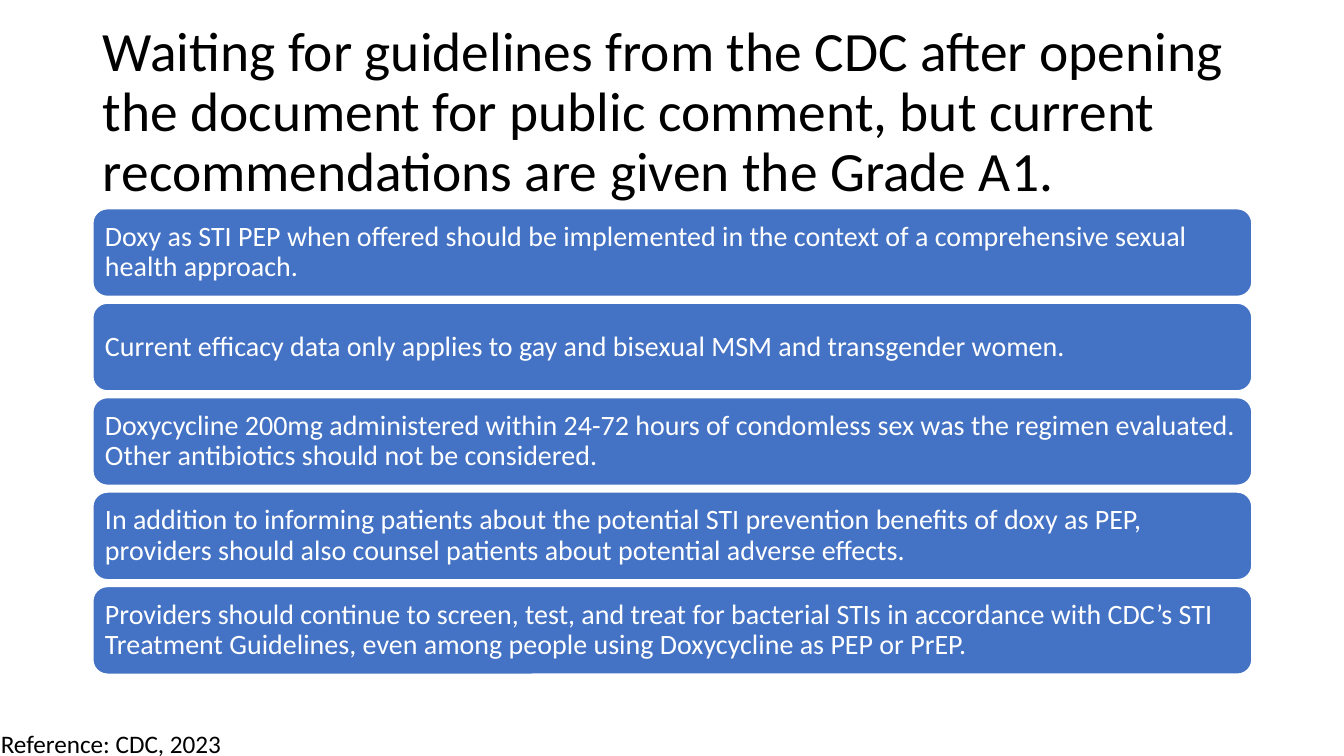
from pptx import Presentation
from pptx.dml.color import RGBColor
from pptx.enum.shapes import MSO_SHAPE
from pptx.enum.text import MSO_ANCHOR, MSO_AUTO_SIZE, PP_ALIGN
from pptx.util import Cm, Pt

TITLE = ("Waiting for guidelines from the CDC after opening the document for public comment, "
         "but current recommendations are given the Grade A1.")
RECOMMENDATIONS = [
    "Doxy as STI PEP when offered should be implemented in the context of a comprehensive "
    "sexual health approach.",
    "Current efficacy data only applies to gay and bisexual MSM and transgender women.",
    "Doxycycline 200mg administered within 24-72 hours of condomless sex was the regimen "
    "evaluated. Other antibiotics should not be considered.",
    "In addition to informing patients about the potential STI prevention benefits of doxy as "
    "PEP, providers should also counsel patients about potential adverse effects.",
    "Providers should continue to screen, test, and treat for bacterial STIs in accordance with "
    "CDC’s STI Treatment Guidelines, even among people using Doxycycline as PEP or PrEP.",
]
REFERENCE = "Reference: CDC, 2023"

COLORS = {"text": "000000", "card": "4472C4", "card_text": "FFFFFF", "outline": "FFFFFF"}
FONT = "Calibri"
LEFT, WIDTH = Cm(2.34), Cm(29.21)
CARDS_TOP, CARD_HEIGHT, CARD_PITCH = Cm(5.26), Cm(2.21), Cm(2.38)
CARD_INSET = Cm(0.2)

TITLE_FRAME = {"word_wrap": True, "auto_size": MSO_AUTO_SIZE.NONE,
               "vertical_anchor": MSO_ANCHOR.MIDDLE}
CARD_FRAME = TITLE_FRAME | {f"margin_{side}": CARD_INSET
                            for side in ("left", "top", "right", "bottom")}
REFERENCE_FRAME = {"word_wrap": True}
TITLE_PARAGRAPH = {"alignment": PP_ALIGN.LEFT, "line_spacing": 0.9}
CARD_PARAGRAPH = TITLE_PARAGRAPH | {"space_after": Pt(7)}


def set_attributes(target, values):
    for name, value in values.items():
        setattr(target, name, value)


def write(shape, text, size, color, frame_format, paragraph_format):
    frame = shape.text_frame
    frame.text = text
    set_attributes(frame, frame_format)
    paragraph = frame.paragraphs[0]
    set_attributes(paragraph, paragraph_format)
    set_attributes(paragraph.font, {"name": FONT, "size": Pt(size)})
    paragraph.font.color.rgb = RGBColor.from_string(COLORS[color])


def add_card(slide, top, text):
    card = slide.shapes.add_shape(MSO_SHAPE.ROUNDED_RECTANGLE, LEFT, top, WIDTH, CARD_HEIGHT)
    card.shadow.inherit = False
    card.fill.solid()
    card.fill.fore_color.rgb = RGBColor.from_string(COLORS["card"])
    card.line.color.rgb = RGBColor.from_string(COLORS["outline"])
    card.line.width = Pt(1)
    write(card, text, 20, "card_text", CARD_FRAME, CARD_PARAGRAPH)


def main():
    deck = Presentation()
    set_attributes(deck, {"slide_width": Cm(33.87), "slide_height": Cm(19.05)})
    slide = deck.slides.add_slide(deck.slide_layouts[5])

    title = slide.shapes.title
    set_attributes(title, {"left": LEFT, "top": Cm(1.02), "width": WIDTH, "height": Cm(3.68)})
    write(title, TITLE, 39.6, "text", TITLE_FRAME, TITLE_PARAGRAPH)

    for row, recommendation in enumerate(RECOMMENDATIONS):
        add_card(slide, CARDS_TOP + row * CARD_PITCH, recommendation)

    reference = slide.shapes.add_textbox(Cm(-0.23), Cm(18.24), Cm(24.64), Cm(1.02))
    write(reference, REFERENCE, 18, "text", REFERENCE_FRAME, {"alignment": PP_ALIGN.LEFT})

    deck.save("out.pptx")


if __name__ == "__main__":
    main()
